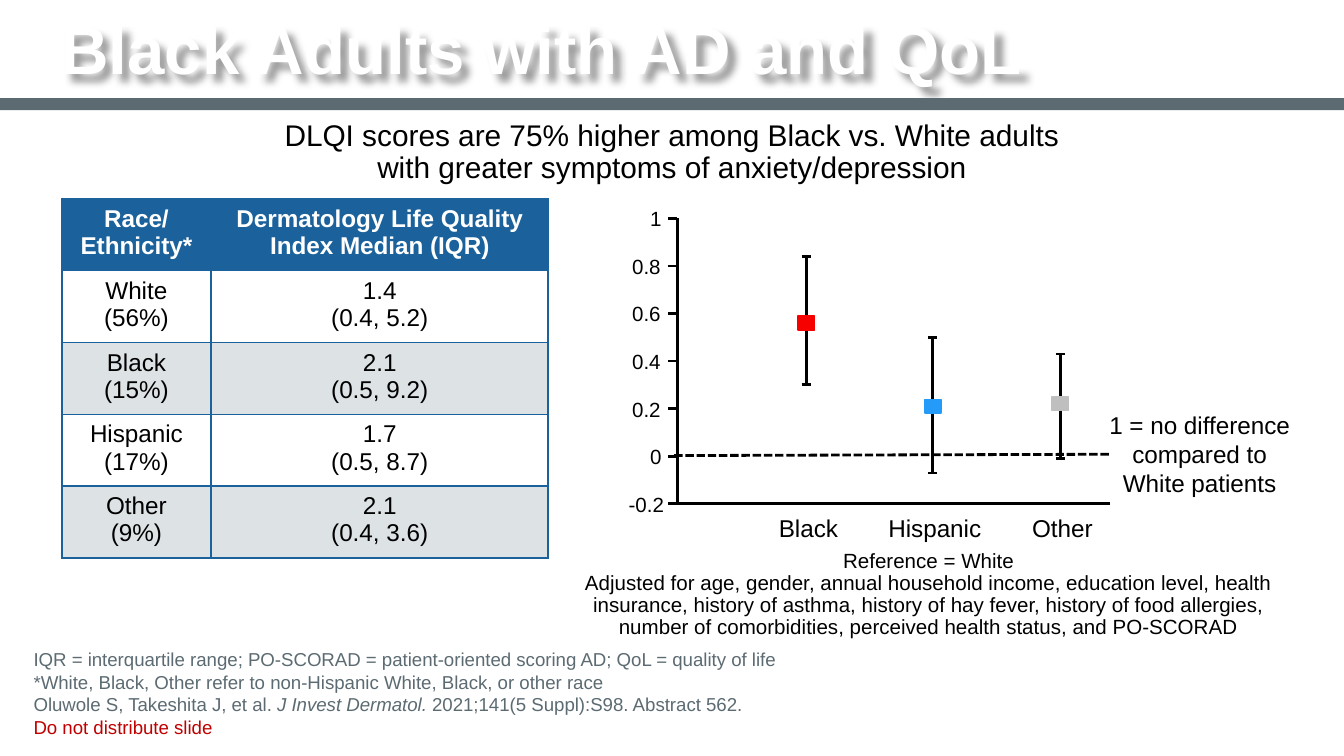
from lxml import etree
from pptx import Presentation
from pptx.dml.color import RGBColor
from pptx.enum.dml import MSO_LINE
from pptx.enum.shapes import MSO_CONNECTOR, MSO_SHAPE
from pptx.enum.text import MSO_ANCHOR, MSO_AUTO_SIZE, PP_ALIGN
from pptx.oxml import parse_xml
from pptx.oxml.ns import nsdecls, qn
from pptx.util import Inches, Pt

LEFT, CENTER = PP_ALIGN.LEFT, PP_ALIGN.CENTER
MIDDLE, BOTTOM = MSO_ANCHOR.MIDDLE, MSO_ANCHOR.BOTTOM
RECT, STRAIGHT = MSO_SHAPE.RECTANGLE, MSO_CONNECTOR.STRAIGHT
DASH, NO_FIT = MSO_LINE.SQUARE_DOT, MSO_AUTO_SIZE.NONE

FONT = "Arial"
BLACK, WHITE, SLATE, BLUE, PALE, RED = (
    "000000", "FFFFFF", "5C6B72", "1B619B", "DDE2E4", "C00000")

# Grid: 100 columns by 56.25 rows
COLS, ROWS = 100, 56.25
AXIS, ZERO, UNIT = 50.4, 33.95, 17.7  # axis column, row of 0, rows per 1.0

TABLE = [
    ("Race/\nEthnicity*", "Dermatology Life Quality Index Median (IQR)"),
    ("White\n(56%)", "1.4\n(0.4, 5.2)"),
    ("Black\n(15%)", "2.1\n(0.5, 9.2)"),
    ("Hispanic\n(17%)", "1.7\n(0.5, 8.7)"),
    ("Other\n(9%)", "2.1\n(0.4, 3.6)"),
]
# name, column, low, mid, high, colour
GROUPS = [
    ("Black", 60, 0.3, 0.56, 0.84, "F60000"),
    ("Hispanic", 69.4, -0.07, 0.21, 0.5, "259BF9"),
    ("Other", 78.9, -0.01, 0.22, 0.43, "BFBFBF"),
]
NOTES = [
    [("IQR = interquartile range; PO-SCORAD = patient-oriented scoring AD; "
      "QoL = quality of life", SLATE, False)],
    [("*White, Black, Other refer to non-Hispanic White, Black, or other race",
      SLATE, False)],
    [("Oluwole S, Takeshita J, et al. ", SLATE, False),
     ("J Invest Dermatol.", SLATE, True),
     (" 2021;141(5 Suppl):S98. Abstract 562.", SLATE, False)],
    [("Do not distribute slide", RED, False)],
]


def grid(*cells):
    return [Inches(cell / 10) for cell in cells]


def color(code):
    return RGBColor.from_string(code)


def level(value):
    return ZERO - UNIT * value


def add_run(para, text, size, code=BLACK, bold=False, italic=False):
    for i, part in enumerate(text.split("\n")):
        if i:
            para.add_line_break()
        run = para.add_run()
        run.text = part
        font = run.font
        font.name, font.size = FONT, Pt(size)
        font.bold, font.italic = bold, italic
        font.color.rgb = color(code)


def add_text(slide, box, lines, size):
    """Centred text; each line is its wording and line spacing."""
    frame = slide.shapes.add_textbox(*grid(*box)).text_frame
    frame.word_wrap = True
    for i, (text, space) in enumerate(lines):
        para = frame.add_paragraph() if i else frame.paragraphs[0]
        para.alignment, para.line_spacing = CENTER, space
        add_run(para, text, size)


def add_rect(slide, box, code, edge=False):
    shape = slide.shapes.add_shape(RECT, *grid(*box))
    shape.shadow.inherit = False
    shape.fill.solid()
    shape.fill.fore_color.rgb = color(code)
    if edge:
        shape.line.color.rgb = color(code)
        shape.line.width = Pt(1)
    else:
        shape.line.fill.background()


def add_line(slide, x1, y1, x2, y2, dash=None):
    line = slide.shapes.add_connector(STRAIGHT, *grid(x1, y1, x2, y2))
    line.line.color.rgb = color(BLACK)
    line.line.width = Pt(1.5)
    if dash:
        line.line.dash_style = dash
    etree.SubElement(line._element.spPr, qn("a:effectLst"))


def set_title(slide):
    title = slide.shapes.title
    title.left, title.top, title.width, title.height = grid(4.5, 1.2, 93.5, 5.6)
    title.fill.background()
    title.line.fill.background()
    frame = title.text_frame
    frame.margin_left = frame.margin_right = 0
    frame.vertical_anchor, frame.auto_size = MIDDLE, NO_FIT
    para = frame.paragraphs[0]
    para.alignment, para.line_spacing = LEFT, 0.85
    add_run(para, "Black Adults with AD and QoL", 36, WHITE, bold=True)
    # Soft shadow cast by the letters
    title._element.spPr.append(parse_xml(
        f'<a:effectLst {nsdecls("a")}><a:outerShdw blurRad="50800" dist="63500" '
        'dir="2700000" algn="tl" rotWithShape="0"><a:srgbClr val="000000">'
        '<a:alpha val="40000"/></a:srgbClr></a:outerShdw></a:effectLst>'))


def add_border(cell):
    props = cell._tc.get_or_add_tcPr()
    for side in ("lnL", "lnR", "lnT", "lnB"):
        props.append(parse_xml(
            f'<a:{side} {nsdecls("a")} w="12700"><a:solidFill>'
            f'<a:srgbClr val="{BLUE}"/></a:solidFill></a:{side}>'))


def add_scores(slide):
    table = slide.shapes.add_table(
        len(TABLE), 2, *grid(4.6, 14.8, 36.2, 26.7)).table
    for column, width in zip(table.columns, grid(11.1, 25.1)):
        column.width = width
    for r, row in enumerate(TABLE):
        fill = BLUE if r == 0 else WHITE if r % 2 else PALE
        for c, text in enumerate(row):
            cell = table.cell(r, c)
            add_border(cell)
            cell.fill.solid()
            cell.fill.fore_color.rgb = color(fill)
            para = cell.text_frame.paragraphs[0]
            para.alignment = CENTER
            add_run(para, text, 13, BLACK if r else WHITE, bold=r == 0)


def add_plot(slide):
    # Value axis with ticks
    base = level(-0.2)
    add_line(slide, AXIS, level(1), AXIS, base)
    for step in range(-1, 6):
        value = step / 5
        row = level(value)
        add_line(slide, AXIS, row, AXIS - 0.7, row)
        left = 46.3 if step in (0, 5) else 45.6
        add_text(slide, (left, row - 1.4, 5, 2.9), [(f"{value:g}", 1)], 11)

    # Zero line and category axis
    add_line(slide, 82.5, 33.8, 50.1, 33.9, DASH)
    add_line(slide, 82.6, base, 50.3, base)

    # Groups: range, caps, marker, name
    for name, col, low, mid, high, code in GROUPS:
        add_line(slide, col, level(high), col, level(low))
        for end in (low, high):
            add_line(slide, col - 0.35, level(end), col + 0.35, level(end))
        add_rect(slide, (col - 0.6, level(mid) - 0.5, 1.2, 1), code, edge=True)
        add_text(slide, (col - 5.1, 37.7, 10.5, 3.2), [(name, 1)], 13)

    add_text(slide, (81.4, 30, 15.7, 7.6),
             [("1 = no difference compared to White patients", 1)], 13)


def add_notes(slide):
    frame = slide.shapes.add_textbox(*grid(0, 48.35, COLS, 7.9)).text_frame
    frame.word_wrap, frame.vertical_anchor = True, BOTTOM
    frame.margin_left, frame.margin_bottom = grid(2.5, 1.3)
    frame.margin_top = frame.margin_right = 0
    for i, runs in enumerate(NOTES):
        para = frame.add_paragraph() if i else frame.paragraphs[0]
        para.line_spacing = 0.85
        para.space_before = Pt(2 if i else 0)
        for text, code, slant in runs:
            add_run(para, text, 10, code, italic=slant)


def main():
    deck = Presentation()
    deck.slide_width, deck.slide_height = grid(COLS, ROWS)
    slide = deck.slides.add_slide(deck.slide_layouts[5])

    # Heading
    add_rect(slide, (0, 7.3, COLS, 0.9), SLATE)
    set_title(slide)
    add_text(slide, (18.9, 8.5, 62.2, 5.9),
             [("DLQI scores are 75% higher among Black vs. White adults "
               "with greater symptoms of anxiety/depression", 0.9)], 16)

    # Table, plot and notes
    add_scores(slide)
    add_plot(slide)
    add_text(slide, (40.8, 40.3, 56.6, 9.7),
             [("Reference = White", 1),
              ("Adjusted for age, gender, annual household income, education "
               "level, health insurance, history of asthma, history of hay "
               "fever, history of food allergies, number of comorbidities, "
               "perceived health status, and PO-SCORAD", 0.9)], 11)
    add_notes(slide)
    deck.save("out.pptx")


if __name__ == "__main__":
    main()
